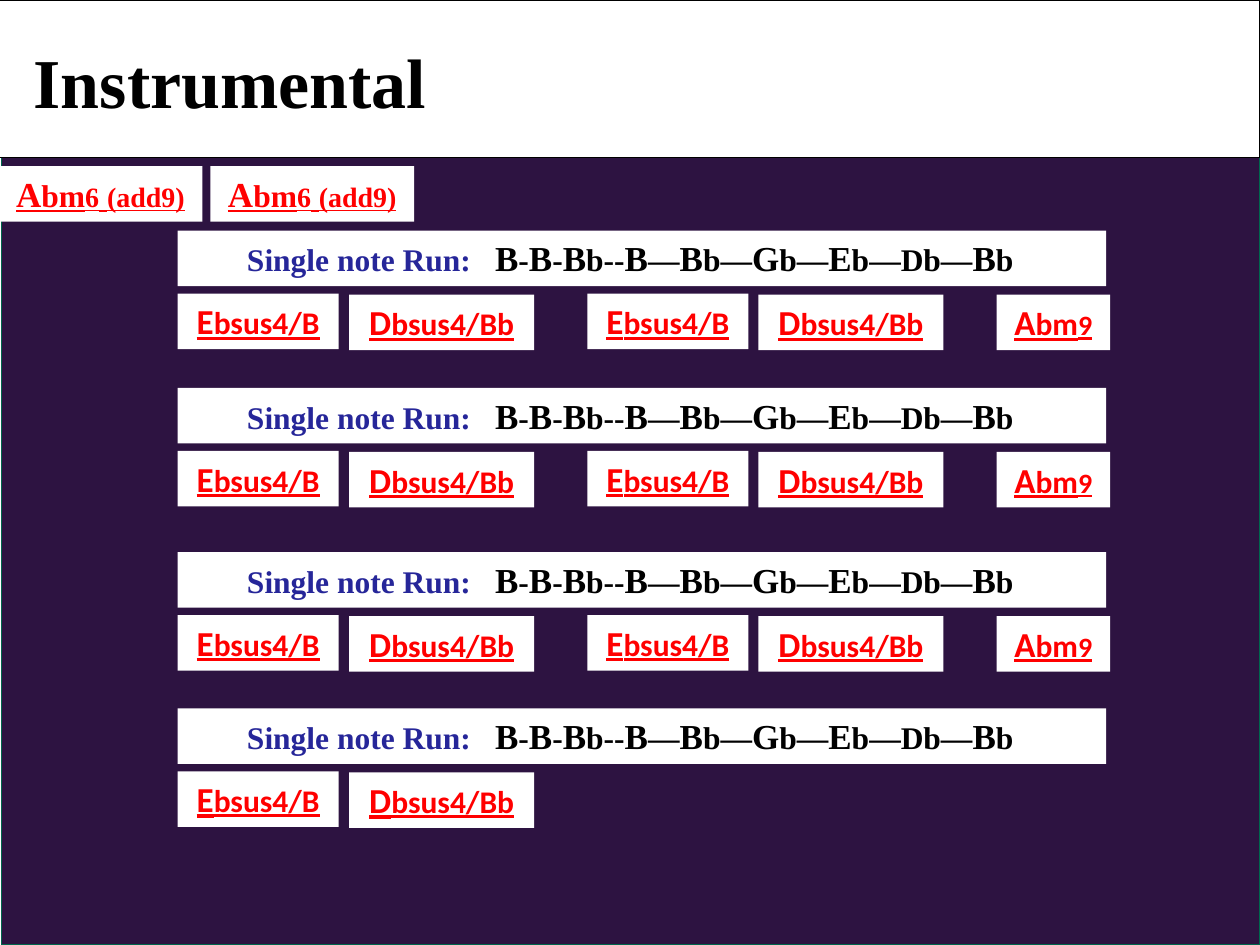
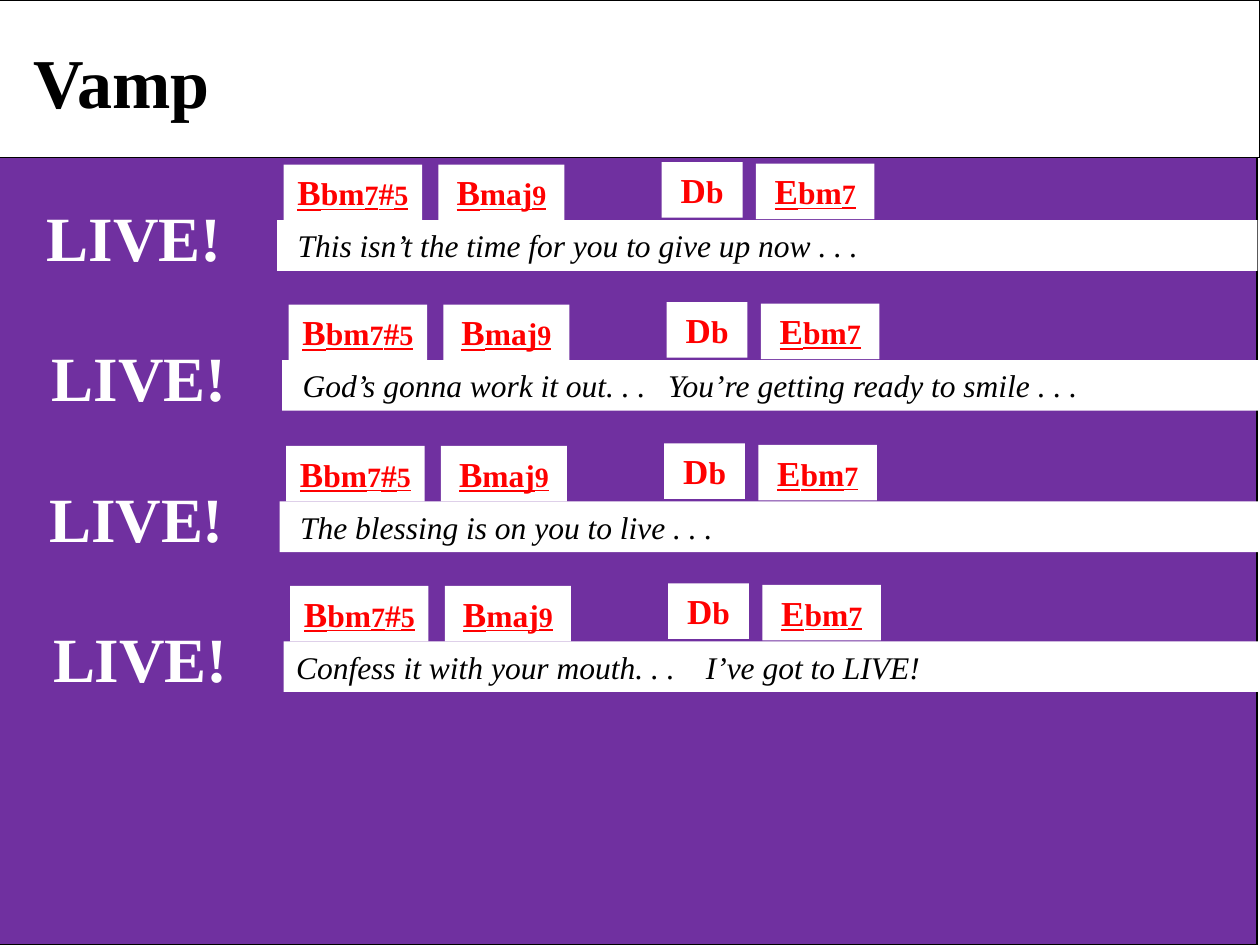
from dataclasses import dataclass
from itertools import cycle

from lxml.etree import SubElement
from pptx import Presentation
from pptx.dml.color import RGBColor
from pptx.enum.shapes import MSO_SHAPE
from pptx.enum.text import MSO_ANCHOR, MSO_AUTO_SIZE, PP_ALIGN
from pptx.oxml.ns import qn
from pptx.util import Cm, Pt


@dataclass(frozen=True)
class Theme:
    serif: str = "Times New Roman"
    sans: str = "Calibri"
    white: str = "FFFFFF"
    black: str = "000000"
    red: str = "FF0000"
    blue: str = "262699"
    green: str = "00664D"
    plum: str = "2D1341"
    violet: str = "7030A0"
    title: int = 40
    shout: int = 36
    big: int = 20
    mid: int = 18
    small: int = 16


THEME = Theme()
BIG, MID, SMALL = THEME.big, THEME.mid, THEME.small
WIDTH, HEIGHT, HEAD = 25.4, 19.05, 3.18
CHORD_H = 1.12

# Each chord is a list of (text, size) parts.
ABM6 = [("A", BIG), ("bm", MID), ("6", SMALL), (" ", MID), ("(add9)", SMALL)]
ABM9 = [("A", BIG), ("bm", MID), ("9", SMALL)]
EBSUS = [("E", BIG), ("bsus4/B", MID)]
DBSUS = [("D", BIG), ("bsus4/Bb", MID)]
BBM7 = [("B", BIG), ("bm", MID), ("7", SMALL), ("#", MID), ("5", SMALL)]
BMAJ9 = [("B", BIG), ("maj", MID), ("9", SMALL)]
DB = [("D", BIG), ("b", MID)]
EBM7 = [("E", BIG), ("bm", MID), ("7", SMALL)]

# Notes of the run, large and medium by turns.
NOTES = "B - B - B b-- B — B b— G b— E b—Db— B b".split()
RUN_TOPS = (4.65, 7.82, 11.13, 14.28)
# Chord, left, width, drop below the top of the run
RUN_CHORDS = (
    (EBSUS, 3.58, 3.25, 1.27),
    (DBSUS, 7.04, 3.73, 1.29),
    (EBSUS, 11.84, 3.25, 1.27),
    (DBSUS, 15.29, 3.73, 1.29),
    (ABM9, 20.09, 2.29, 1.29),
)

# Left, top, text inset, tab stop, words
LYRICS = (
    (5.59, 4.44, 0.41, None, "This isn’t the time for you to give up now . . ."),
    (5.69, 7.26, 0.41, 7.37,
     "God’s gonna work it out. . .\tYou’re getting ready to smile . . ."),
    (5.64, 10.11, 0.41, None, "The blessing is on you to live . . ."),
    (5.72, 12.93, 0.25, 8.26,
     "Confess it with your mouth. . .\tI’ve got to LIVE!"),
)
# Chord, shift right, width, rise above the lyric, underline
VAMP_CHORDS = (
    (BBM7, 0.13, 2.79, 1.12, True),
    (BMAJ9, 3.25, 2.54, 1.12, True),
    (DB, 7.75, 1.63, 1.17, False),
    (EBM7, 9.65, 2.39, 1.14, True),
)


def put(par, text, size=MID, color=THEME.black, font=THEME.serif,
        bold=True, ital=False, under=False):
    run = par.add_run()
    run.text = text
    face = run.font
    face.name, face.size = font, Pt(size)
    face.bold, face.italic, face.underline = bold, ital, under
    face.color.rgb = RGBColor.from_string(color)


def frame(shape, align=PP_ALIGN.LEFT, inset=0.25, tab=None):
    """Lay out the text area of a shape and return its paragraph."""
    area = shape.text_frame
    area.word_wrap = True
    area.auto_size = MSO_AUTO_SIZE.NONE
    area.vertical_anchor = MSO_ANCHOR.TOP
    area.margin_left = Cm(inset)
    par = area.paragraphs[0]
    par.alignment = align
    if tab:
        stops = SubElement(par._p.get_or_add_pPr(), qn("a:tabLst"))
        SubElement(stops, qn("a:tab"), pos=str(Cm(tab)), algn="l")
    return par


class Deck:
    def __init__(self, theme):
        self.theme = theme
        self.show = Presentation()
        self.show.slide_width, self.show.slide_height = Cm(WIDTH), Cm(HEIGHT)
        self.slide = None

    def box(self, left, top, width, height, fill=None, line=None):
        shape = self.slide.shapes.add_shape(
            MSO_SHAPE.RECTANGLE, Cm(left), Cm(top), Cm(width), Cm(height))
        shape.shadow.inherit = False
        shape.fill.solid()
        shape.fill.fore_color.rgb = RGBColor.from_string(
            fill or self.theme.white)
        if line:
            shape.line.color.rgb = RGBColor.from_string(line)
            shape.line.width = Pt(0.75)
        else:
            shape.line.fill.background()
        return shape

    def page(self, name, fill, line, left):
        """Start a slide with its body panel, head band and title."""
        theme = self.theme
        self.slide = self.show.slides.add_slide(self.show.slide_layouts[5])
        self.box(left, HEAD, 25.37, HEIGHT - HEAD, fill, line)
        self.box(-0.03, 0, 25.43, HEAD, line=theme.black)
        title = self.slide.shapes.title
        title.left, title.top = Cm(0.43), Cm(0.64)
        title.width, title.height = Cm(8.46), Cm(1.96)
        title.fill.solid()
        title.fill.fore_color.rgb = RGBColor.from_string(theme.white)
        put(frame(title), name, size=theme.title)
        # The title must stand in front of the band.
        self.slide.shapes.element.append(title.element)

    def chord(self, parts, left, top, width, font=None, under=True):
        par = frame(self.box(left, top, width, CHORD_H), PP_ALIGN.CENTER)
        for text, size in parts:
            put(par, text, size=size, color=self.theme.red,
                font=font or self.theme.serif, under=under)

    def notes(self, top):
        par = frame(self.box(3.58, top, 18.72, CHORD_H), inset=1.4, tab=5.0)
        put(par, "Single note Run:\t", color=self.theme.blue)
        for text, size in zip(NOTES, cycle((BIG, MID))):
            put(par, text, size=size)

    def lyric(self, left, top, inset, tab, words):
        shape = self.box(left, top, 19.76, 1.02)
        put(frame(shape, inset=inset, tab=tab), words, bold=False, ital=True)

    def shout(self, left, top):
        shape = self.slide.shapes.add_textbox(
            Cm(left), Cm(top), Cm(5.03), Cm(1.8))
        put(frame(shape, inset=0.89), "LIVE!",
            size=self.theme.shout, color=self.theme.white)


def solo(deck):
    deck.page("Instrumental", THEME.plum, THEME.green, 0.03)
    for left in (-0.03, 4.24):
        deck.chord(ABM6, left, 3.35, 4.11)
    for top in RUN_TOPS:
        deck.notes(top)
        count = 2 if top == RUN_TOPS[-1] else len(RUN_CHORDS)
        for parts, left, width, drop in RUN_CHORDS[:count]:
            deck.chord(parts, left, top + drop, width, font=THEME.sans)


def vamp(deck):
    deck.page("Vamp", THEME.violet, THEME.black, -0.03)
    for left, top, inset, tab, words in LYRICS:
        deck.shout(left - 5.54, top - 0.56)
        for parts, shift, width, rise, under in VAMP_CHORDS:
            deck.chord(parts, left + shift, top - rise, width, under=under)
        deck.lyric(left, top, inset, tab, words)


def main():
    deck = Deck(THEME)
    solo(deck)
    vamp(deck)
    deck.show.save("out.pptx")


if __name__ == "__main__":
    main()
